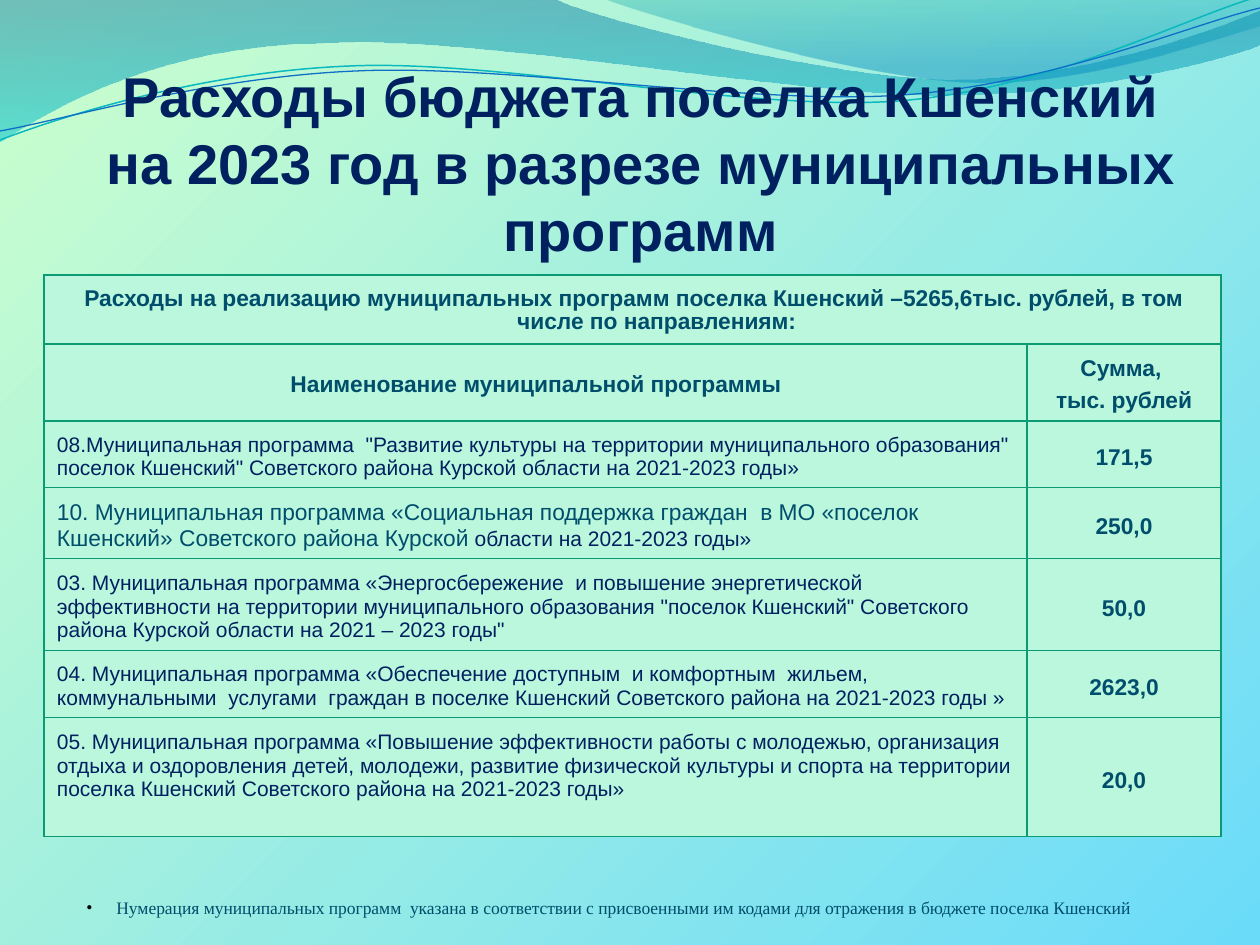
from lxml import etree
from pptx import Presentation
from pptx import util as u
from pptx.dml.color import RGBColor
from pptx.enum import text
from pptx.oxml import parse_xml
from pptx.oxml.ns import nsdecls, qn

PX = 914400 / 126
NAVY = RGBColor(0x00, 0x20, 0x60)
TEAL = RGBColor(0x00, 0x4E, 0x6C)
GREEN = RGBColor(0x0A, 0x9B, 0x74)
MINT = RGBColor(0xBB, 0xF7, 0xDD)
BLACK = RGBColor(0x00, 0x00, 0x00)
CYAN = RGBColor(0x0A, 0xB8, 0xBF)
BLUE = RGBColor(0x0F, 0x6F, 0xC6)
SKY = RGBColor(0x6B, 0xDB, 0xFA)
LIME = RGBColor(0xCC, 0xFF, 0xCC)
WAVE_TOP = RGBColor(0x00, 0x74, 0xA1)
WAVE_LOW = RGBColor(0x00, 0xC6, 0xCF)
CREST_TOP = RGBColor(0x00, 0xA1, 0xA9)
CREST_LOW = RGBColor(0x00, 0x8B, 0xBF)

WAVE = [(0, 0), (554, -1), (600, 21, 837, 79, 955, 79), (1075, 79, 1207, 33, 1260, 11),
        (1261, 45), (1239, 55, 1096, 96, 940, 95), (784, 95, 481, 35, 324, 43),
        (163, 45, 58, 105, -1, 142)]
CREST = [(604, -1), (641, 14, 859, 78, 969, 82), (1079, 87, 1211, 40, 1260, 26), (1260, 0)]
CYAN_CURVE = [(0, 140), (60, 117, 199, 72, 349, 66), (498, 59, 747, 112, 898, 101),
              (1050, 89, 1182, 19, 1257, -3)]
BLUE_CURVE = [(0, 131), (59, 121, 207, 77, 357, 71), (508, 64, 752, 106, 903, 95),
              (1053, 84, 1186, 26, 1260, 8)]

PROGRAMS = [
    (67, [('08.Муниципальная программа  "Развитие культуры на территории муниципального образования" '
           'поселок Кшенский" Советского района Курской области на 2021-2023 годы»', 12, NAVY)], "171,5"),
    (71, [("10. Муниципальная программа «Социальная поддержка граждан  в МО «поселок "
           "Кшенский» Советского района Курской ", 13, TEAL),
          ("области на 2021-2023 годы»", 12, NAVY)], "250,0"),
    (92, [("03. Муниципальная программа «Энергосбережение  и повышение энергетической  "
           'эффективности на территории муниципального образования "поселок Кшенский" Советского '
           'района Курской области на 2021 – 2023 годы"', 12, NAVY)], "50,0"),
    (67, [("04. Муниципальная программа «Обеспечение доступным  и комфортным  жильем, "
           "коммунальными  услугами  граждан в поселке Кшенский Советского района "
           "на 2021-2023 годы » ", 12, NAVY)], "2623,0"),
    (119, [("05. Муниципальная программа «Повышение эффективности работы с молодежью, организация  "
            "отдыха и оздоровления детей, молодежи, развитие физической культуры и спорта "
            "на территории поселка Кшенский Советского района на 2021-2023 годы»", 12, NAVY)], "20,0"),
]


def px(n):
    return u.Emu(round(n * PX))


def set_font(font, name, size, color, bold=False):
    font.name, font.size, font.bold = name, u.Pt(size), bold
    font.color.rgb = color


def gradient(stops, shade):
    gs = "".join(f'<a:gs pos="{pos * 1000}"><a:srgbClr val="{color}">'
                 f'<a:alpha val="{alpha * 1000}"/></a:srgbClr></a:gs>'
                 for pos, color, alpha in stops)
    return parse_xml(f'<a:gradFill {nsdecls("a")} rotWithShape="1"><a:gsLst>{gs}</a:gsLst>{shade}</a:gradFill>')


def add_background(s):
    s.background.fill.solid()
    old = s.background._cSld.bg.bgPr.find(qn("a:solidFill"))
    shade = '<a:path path="circle"><a:fillToRect l="100000" t="100000"/></a:path>'
    old.getparent().replace(old, gradient([(0, SKY, 100), (100, LIME, 100)], shade))


def add_curve(s, x, y, outline, close):
    ends = [(px(x + step[-2]), px(y + step[-1])) for step in outline]
    builder = s.shapes.build_freeform(*ends[0])
    builder.add_line_segments(ends[1:], close=close)
    sp = builder.convert_to_shape()
    sp.shadow.inherit = False
    segments = list(sp._element.iter(qn("a:lnTo")))
    for segment, step in zip(segments, outline[1:]):
        if len(step) == 6:
            bezier = etree.Element(qn("a:cubicBezTo"))
            for a, b in zip(step[::2], step[1::2]):
                etree.SubElement(bezier, qn("a:pt"), x=str(px(x + a) - sp.left), y=str(px(y + b) - sp.top))
            segment.getparent().replace(segment, bezier)
    return sp


def add_waves(s, x, y):
    for outline, stops in ((WAVE, [(0, WAVE_TOP, 45), (100, WAVE_LOW, 55)]),
                           (CREST, [(0, CREST_TOP, 30), (80, CREST_LOW, 45)])):
        sp = add_curve(s, x, y, outline, True)
        sp.line.fill.background()
        sp.fill.solid()
        old = sp._element.spPr.find(qn("a:solidFill"))
        old.getparent().replace(old, gradient(stops, '<a:lin ang="5400000" scaled="0"/>'))
    for outline, color, width in ((CYAN_CURVE, CYAN, 0.85), (BLUE_CURVE, BLUE, 0.75)):
        sp = add_curve(s, x, y, outline, False)
        sp.fill.background()
        sp.line.color.rgb = color
        sp.line.width = u.Pt(width)


def add_title(s, x, y, w, h):
    sp = s.shapes.title
    s.shapes._spTree.append(sp._element)
    sp.left, sp.top, sp.width, sp.height = map(px, (x, y, w, h))
    tf = sp.text_frame
    tf.text = "Расходы бюджета поселка Кшенский на 2023 год в разрезе муниципальных программ"
    tf.word_wrap = True
    tf.auto_size = text.MSO_AUTO_SIZE.NONE
    tf.vertical_anchor = text.MSO_ANCHOR.BOTTOM
    tf.margin_left = tf.margin_right = px(13)
    tf.margin_top = tf.margin_bottom = 0
    p = tf.paragraphs[0]
    p.alignment = text.PP_ALIGN.CENTER
    p.line_spacing = 1.0
    set_font(p.font, "Arial", 32, NAVY, True)


def style_cell(cell, top=10, bottom=6, side=13):
    tcPr = cell._tc.get_or_add_tcPr()
    for edge in ("lnL", "lnR", "lnT", "lnB"):
        tcPr.append(parse_xml(f'<a:{edge} {nsdecls("a")} w="9525"><a:solidFill>'
                              f'<a:srgbClr val="{GREEN}"/></a:solidFill></a:{edge}>'))
    cell.fill.solid()
    cell.fill.fore_color.rgb = MINT
    cell.vertical_anchor = text.MSO_ANCHOR.MIDDLE
    cell.margin_left = cell.margin_right = px(side)
    cell.margin_top, cell.margin_bottom = px(top), px(bottom)


def write_bold(cell, words):
    tf = cell.text_frame
    tf.text = words
    for i, p in enumerate(tf.paragraphs):
        p.alignment = text.PP_ALIGN.CENTER
        p.space_before = u.Pt(3.5 if i else 0)
        set_font(p.font, "Arial", 13, TEAL, True)
    return tf.paragraphs[0]


def add_programs(s, x, y, w, name_w):
    heights = [69, 77] + [h for h, _, _ in PROGRAMS]
    table = s.shapes.add_table(len(heights), 2, px(x), px(y), px(w), px(sum(heights))).table
    table.first_row = table.horz_banding = False
    table.columns[0].width, table.columns[1].width = px(name_w), px(w - name_w)
    for row, h in zip(table.rows, heights):
        row.height = px(h)
    for col in (0, 1):
        style_cell(table.cell(0, col), 9, 5, 5)
        style_cell(table.cell(1, col))
    table.cell(0, 0).merge(table.cell(0, 1))
    p = write_bold(table.cell(0, 0), "Расходы на реализацию муниципальных программ поселка Кшенский "
                                     "–5265,6тыс. рублей, в том числе по направлениям:")
    p.line_spacing = 0.9
    p._p.get_or_add_pPr().set("marL", str(px(48)))
    p._p.get_or_add_pPr().set("indent", str(px(-47)))
    write_bold(table.cell(1, 0), "Наименование муниципальной программы")
    write_bold(table.cell(1, 1), "Сумма, \nтыс. рублей")
    for i, (_, parts, amount) in enumerate(PROGRAMS, 2):
        name, total = table.cell(i, 0), table.cell(i, 1)
        style_cell(name)
        style_cell(total, 13)
        write_bold(total, amount)
        p = name.text_frame.paragraphs[0]
        for words, size, color in parts:
            r = p.add_run()
            r.text = words
            set_font(r.font, "Arial", size, color)
    name.vertical_anchor = text.MSO_ANCHOR.TOP
    name.margin_top = px(13)


def add_note(s, x, y, w, h):
    tf = s.shapes.add_textbox(*map(px, (x, y, w, h))).text_frame
    tf.word_wrap = True
    tf.vertical_anchor = text.MSO_ANCHOR.MIDDLE
    p = tf.paragraphs[0]
    p.text = ("Нумерация муниципальных программ  указана в соответствии с присвоенными им кодами "
              "для отражения в бюджете поселка Кшенский")
    set_font(p.font, "Times New Roman", 10, TEAL)
    pPr = p._p.get_or_add_pPr()
    pPr.set("marL", str(px(30)))
    pPr.set("indent", str(px(-30)))
    color = etree.Element(qn("a:buClr"))
    etree.SubElement(color, qn("a:srgbClr"), val=str(BLACK))
    pPr.insert(0, color)
    pPr.insert(1, etree.Element(qn("a:buFont"), typeface="Times New Roman"))
    pPr.insert(2, etree.Element(qn("a:buChar"), char="•"))


def main():
    prs = Presentation()
    prs.slide_width, prs.slide_height = px(1260), px(945)
    s = prs.slides.add_slide(prs.slide_layouts[5])
    add_background(s)
    add_waves(s, 0, 0)
    add_title(s, 74, 55, 1134, 208)
    add_programs(s, 44, 275, 1177, 983)
    add_note(s, 74, 891, 1142, 34)
    prs.save("out.pptx")


if __name__ == "__main__":
    main()
